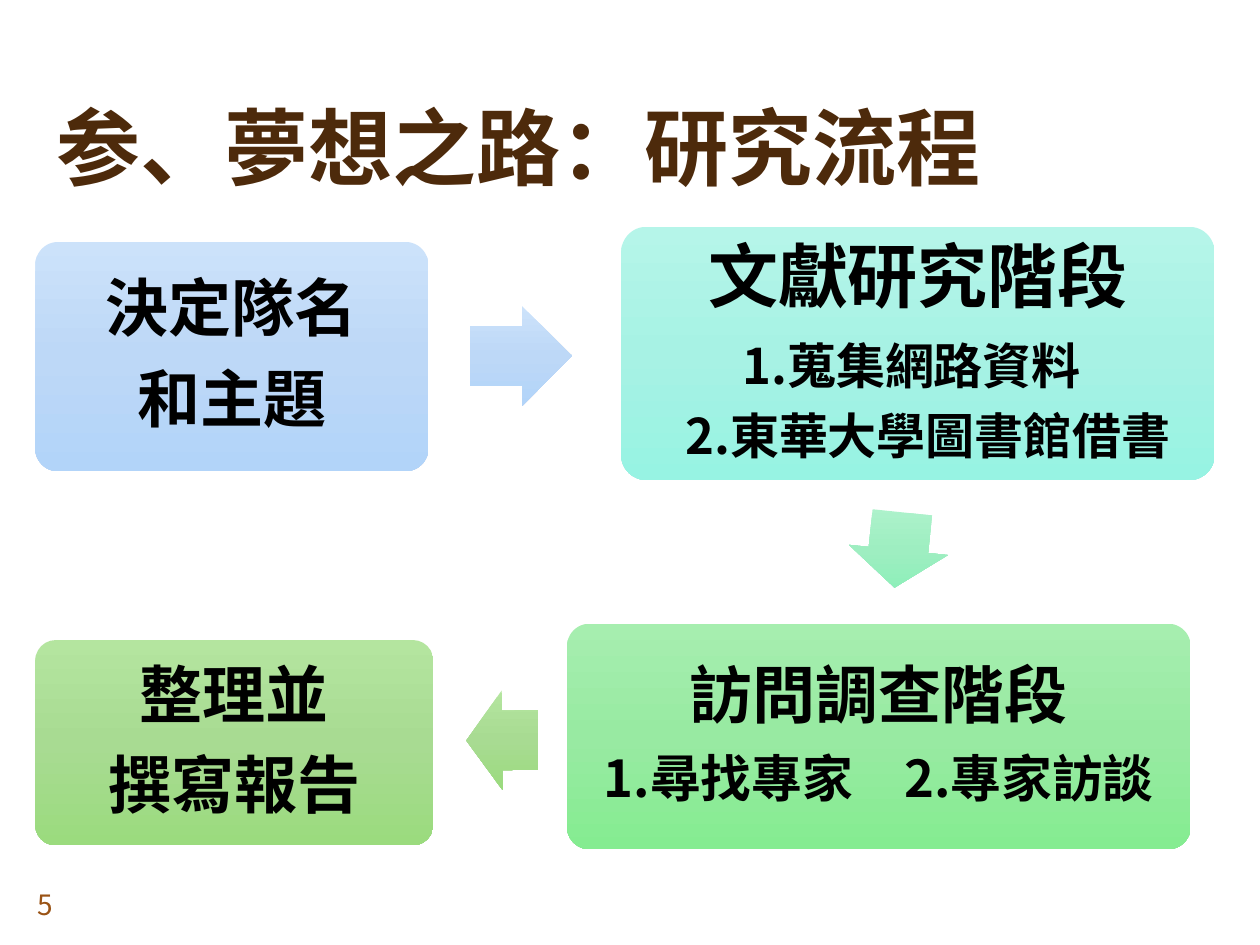
import copy

import pptx
import pptx.dml.color
import pptx.enum.shapes
import pptx.enum.text
import pptx.oxml.ns
import pptx.util
from lxml import etree
from pptx.util import Inches

COLORS = {
    "title": "4D2A0B", "number": "9A5315", "text": "000000",
    "blue": ("CCE2FA", "BDD8F7", "B2D4F9"),
    "aqua": ("B5F5E9", "A7F2E4", "97F3E3"),
    "mint": ("ADF2CB", "9EEEC1", "8CEFB9"),
    "green": ("A6EEAF", "98EAA2", "85EC91"),
    "lime": ("B4E59F", "A8DB92", "9BDB7E"),
}
TITLE_FONT = "Noto Sans CJK SC"
BODY_FONT = "Noto Sans CJK TC"
SHAPES = pptx.enum.shapes.MSO_SHAPE
ANCHOR = pptx.enum.text.MSO_ANCHOR
qn = pptx.oxml.ns.qn

STEPS = [
    ((0.28, 1.92, 3.12, 1.82), "blue",
     [("決定隊名", 36, 0, 0), ("和主題", 36, 0, 0)]),
    ((4.93, 1.8, 4.71, 2.01), "aqua",
     [("文獻研究階段", 40, 0, 0), ("1.蒐集網路資料", 28, 0, 0.1),
      ("2.東華大學圖書館借書", 28, 0.16, 0)]),
    ((4.5, 4.95, 4.95, 1.79), "green",
     [("訪問調查階段", 36, 0, 0), ("1.尋找專家　2.專家訪談", 29, 0, 0)]),
    ((0.28, 5.08, 3.16, 1.63), "lime",
     [("整理並", 36, 0, 0), ("撰寫報告", 36, 0, 0)]),
]
ARROWS = [
    ((3.73, 2.43, 0.81, 0.79), "blue", 359.8),
    ((6.83, 3.97, 0.6, 0.79), "mint", 95.9),
    ((3.7, 5.48, 0.57, 0.79), "lime", 179.5),
]


def set_font(p, name, size, color, bold=False):
    """Set the paragraph font for Latin and East Asian text."""
    p.font.name = name
    p.font.size = pptx.util.Pt(size)
    p.font.bold = bold
    p.font.color.rgb = pptx.dml.color.RGBColor.from_string(color)
    for r in p.runs:
        r.font.name = name
        etree.SubElement(r.font._element, qn("a:ea")).set("typeface", name)


def add_block(s, box, kind, colors):
    """Add a borderless shape with an upright three-stop gradient."""
    sp = s.shapes.add_shape(kind, *map(Inches, box))
    sp.shadow.inherit = False
    sp.line.fill.background()
    sp.fill.gradient()
    sp.fill.gradient_angle = 270
    grad = sp._element.spPr.find(qn("a:gradFill"))
    grad.set("rotWithShape", "0")
    stops = grad.find(qn("a:gsLst"))
    stops.insert(1, copy.deepcopy(stops[0]))
    for stop, position, color in zip(sp.fill.gradient_stops, (0, 0.5, 1), colors):
        stop.position = position
        stop.color.rgb = pptx.dml.color.RGBColor.from_string(color)
    return sp


def add_step(s, box, color, lines):
    """Add one rounded step with its centred lines."""
    sp = add_block(s, box, SHAPES.ROUNDED_RECTANGLE, COLORS[color])
    sp.adjustments[0] = 0.1
    tf = sp.text_frame
    tf.word_wrap = True
    tf.vertical_anchor = ANCHOR.MIDDLE
    tf.margin_left = tf.margin_right = Inches(0.1)
    tf.margin_top = tf.margin_bottom = Inches(0.1)
    for i, (text, size, left, right) in enumerate(lines):
        p = tf.add_paragraph() if i else tf.paragraphs[0]
        p.add_run().text = text
        p.alignment = pptx.enum.text.PP_ALIGN.CENTER
        p.line_spacing = 0.9
        pPr = p._p.get_or_add_pPr()
        pPr.set("marL", str(Inches(left)))
        pPr.set("marR", str(Inches(right)))
        after = etree.SubElement(pPr, qn("a:spcAft"))
        etree.SubElement(after, qn("a:spcPct")).set("val", "35000")
        set_font(p, BODY_FONT, size, COLORS["text"], True)


def add_arrow(s, box, color, rotation):
    """Add one block arrow between two steps."""
    sp = add_block(s, box, SHAPES.RIGHT_ARROW, COLORS[color])
    sp.adjustments[0] = 0.6
    sp.adjustments[1] = 0.5
    sp.rotation = rotation


def add_label(s, box, text, anchor, font, size, color, bold=False):
    """Add a single-line text box."""
    tf = s.shapes.add_textbox(*map(Inches, box)).text_frame
    tf.word_wrap = True
    tf.vertical_anchor = anchor
    p = tf.paragraphs[0]
    p.add_run().text = text
    p.line_spacing = 0.9 if bold else 1.0
    set_font(p, font, size, COLORS[color], bold)


def main():
    """Build the research process slide."""
    prs = pptx.Presentation()
    prs.slide_width, prs.slide_height = Inches(10), Inches(7.5)
    s = prs.slides.add_slide(prs.slide_layouts[6])
    add_label(s, (0.35, 0.29, 8.25, 1.33), "参、夢想之路：研究流程",
              ANCHOR.BOTTOM, TITLE_FONT, 48, "title", True)
    for step in STEPS:
        add_step(s, *step)
    for arrow in ARROWS:
        add_arrow(s, *arrow)
    add_label(s, (0.2, 6.98, 0.63, 0.39), "5", ANCHOR.MIDDLE, BODY_FONT, 16, "number")
    prs.save("out.pptx")


if __name__ == "__main__":
    main()
